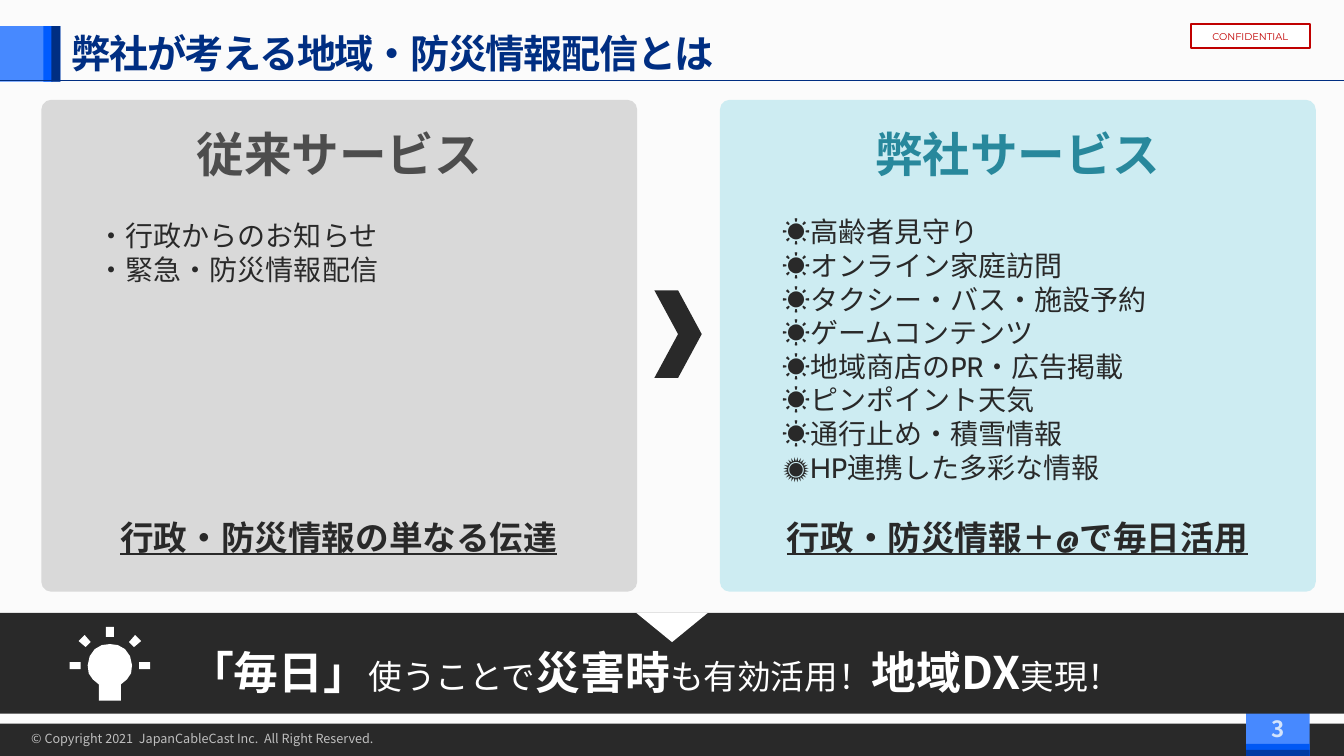
from lxml import etree
from pptx import Presentation
from pptx import util as u
from pptx.dml.color import RGBColor
from pptx.enum import shapes, text
from pptx.oxml.ns import qn

PX = 9144
WIDE, HIGH = 1333, 750
NOTO, CABIN, MONT = "Noto Sans CJK JP", "Cabin", "Montserrat"
DARK, NAVY, WHITE, RED = "292929", "002E82", "FFFFFF", "C00000"
KIND = shapes.MSO_SHAPE
MID, TOP = text.MSO_ANCHOR.MIDDLE, text.MSO_ANCHOR.TOP
LEFT, MAIN = text.PP_ALIGN.LEFT, text.PP_ALIGN.CENTER

TITLE = "弊社が考える地域・防災情報配信とは"
BARS = [
    (0, 718, WIDE, 32, DARK),
    (0, 26, 60, 55, "4789FF"),
    (43, 26, 9, 55, "005BFE"),
    (51, 26, 9, 55, NAVY),
    (1236, 695, 63, 55, "4789FF"),
    (1236, 738, 63, 12, "0058F4"),
    (1236, 744, 63, 6, "003AA3"),
]
PANELS = [
    {"x": 41, "fill": "D9D9D9", "ink": "4D4D4D", "head": "従来サービス",
     "list": (87, 212, 520, 77),
     "items": ["・行政からのお知らせ", "・緊急・防災情報配信"],
     "sum": (76, "行政・防災情報の単なる伝達")},
    {"x": 714, "fill": "CDECF2", "ink": "28889C", "head": "弊社サービス",
     "list": (766, 207, 520, 279),
     "items": ["☀高齢者見守り", "☀オンライン家庭訪問", "☀タクシー・バス・施設予約",
               "☀ゲームコンテンツ", "☀地域商店のPR・広告掲載", "☀ピンポイント天気",
               "☀通行止め・積雪情報", "☀HP連携した多彩な情報"],
     "sum": (749, "行政・防災情報＋@で毎日活用")},
]
BANNER = [("「毎日」", 32), ("使うことで", 24), ("災害時", 32),
          ("も有効活用！", 24), ("地域DX", 32), ("実現！\u3000", 24)]
BULB = [
    [(98, 695), (98, 679), (92, 674), (88, 668), (87, 660), (89, 651), (94, 644),
     (101, 640), (109, 639), (117, 640), (124, 644), (129, 651), (131, 660),
     (130, 668), (126, 674), (120, 679), (120, 695)],
    [(105, 622), (113, 622), (113, 632), (105, 632)],
    [(134, 630), (140, 636), (133, 642), (128, 637)],
    [(84, 630), (90, 637), (85, 642), (78, 636)],
    [(138, 657), (149, 657), (149, 664), (138, 664)],
    [(69, 657), (80, 657), (80, 664), (69, 664)],
]


def tint(code):
    return RGBColor.from_string(code)


def dist(*vals):
    return [val * PX for val in vals]


def paint(item, fill, line=None):
    item.shadow.inherit = False
    item.fill.solid()
    item.fill.fore_color.rgb = tint(fill)
    if line:
        item.line.color.rgb = tint(line)
        item.line.width = u.Pt(1.5)
    else:
        item.line.fill.background()
    return item


def shape(kind, box, fill, line=None):
    return paint(slide.shapes.add_shape(kind, *dist(*box)), fill, line)


def style(par, font, ink, size=None, bold=None, line=None):
    face = par.font
    face.color.rgb = tint(ink)
    face.name = font
    if size:
        face.size = u.Pt(size)
    face.bold, face.underline = bold, line
    base = par._p.pPr.find(qn("a:defRPr"))
    etree.SubElement(base, qn("a:ea")).set("typeface", font)


def write(item, lines, font, ink, size=None, bold=None, line=None,
          align=LEFT, anchor=MID, pad=(10, 5, 10, 5), lead=None, after=None):
    frame = item.text_frame
    frame.word_wrap = True
    frame.vertical_anchor = anchor
    (frame.margin_left, frame.margin_top,
     frame.margin_right, frame.margin_bottom) = dist(*pad)
    for num, words in enumerate(lines):
        par = frame.add_paragraph() if num else frame.paragraphs[0]
        par.alignment = align
        if lead:
            par.line_spacing = lead
        if after:
            par.space_after = u.Pt(after)
        if isinstance(words, str):
            par.text = words
        else:
            for part, pts in words:
                run = par.add_run()
                run.text = part
                run.font.size = u.Pt(pts)
                run.font.bold = pts == 32
        style(par, font, ink, size, bold, line)


def label(box, lines, *args, **opts):
    write(slide.shapes.add_textbox(*dist(*box)), lines, *args, **opts)


deck = Presentation()
deck.slide_width, deck.slide_height = dist(WIDE, HIGH)
slide = deck.slides.add_slide(deck.slide_layouts[5])
slide.background.fill.solid()
slide.background.fill.fore_color.rgb = tint("FBFBFB")

for *box, fill in BARS:
    shape(KIND.RECTANGLE, box, fill)
label((1236, 695, 63, 55), ["3"], NOTO, "D4E4FC", 16, True,
      align=MAIN, anchor=TOP, pad=(0, 14, 0, 0))
stamp = shape(KIND.RECTANGLE, (1181, 24, 118, 24), WHITE, RED)
write(stamp, ["CONFIDENTIAL"], MONT, RED, 7, align=MAIN, pad=(0, 0, 0, 0))
label((31, 724, 407, 16),
      ["© Copyright 2021  JapanCableCast Inc.  All Right Reserved."],
      NOTO, "BFBFBF", 9, anchor=TOP, pad=(0, 0, 0, 0), lead=1.1, after=6)

rule = slide.shapes.add_connector(shapes.MSO_CONNECTOR.STRAIGHT, *dist(0, 80, WIDE, 80))
rule.line.color.rgb = tint(NAVY)
rule.line.width = u.Pt(1)
etree.SubElement(rule._element.spPr, qn("a:effectLst"))

title = slide.shapes.title
title.left, title.top, title.width, title.height = dist(0, 31, 1155, 43)
write(title, [TITLE], NOTO, NAVY, 28, True, pad=(71, 0, 0, 0))
title.text_frame.paragraphs[0].runs[0]._r.get_or_add_rPr().set("spc", "-100")

band = shape(KIND.RECTANGLE, (0, 608, WIDE, 100), DARK)
write(band, [BANNER], NOTO, WHITE, align=MAIN, lead=1.3, after=6)
notch = shape(KIND.ISOSCELES_TRIANGLE, (631, 608, 71, 29), WHITE)
notch.rotation = 180
shape(KIND.CHEVRON, (649, 288, 47, 87), DARK)

for panel in PANELS:
    card = shape(KIND.ROUNDED_RECTANGLE, (panel["x"], 99, 591, 488), panel["fill"])
    card.adjustments[0] = 0.02
    write(card, [panel["head"]], NOTO, panel["ink"], 34, True,
          align=MAIN, anchor=TOP, lead=1.3, after=6)
    label(panel["list"], panel["items"], CABIN, DARK, 20)
    left, words = panel["sum"]
    label((left, 508, 520, 50), [words], CABIN, DARK, 24, True, True, align=MAIN)

pen = slide.shapes.build_freeform(*BULB[0][0], scale=PX)
pen.add_line_segments(BULB[0][1:])
for ray in BULB[1:]:
    pen.move_to(*ray[0])
    pen.add_line_segments(ray[1:])
paint(pen.convert_to_shape(), WHITE)

deck.save("out.pptx")
